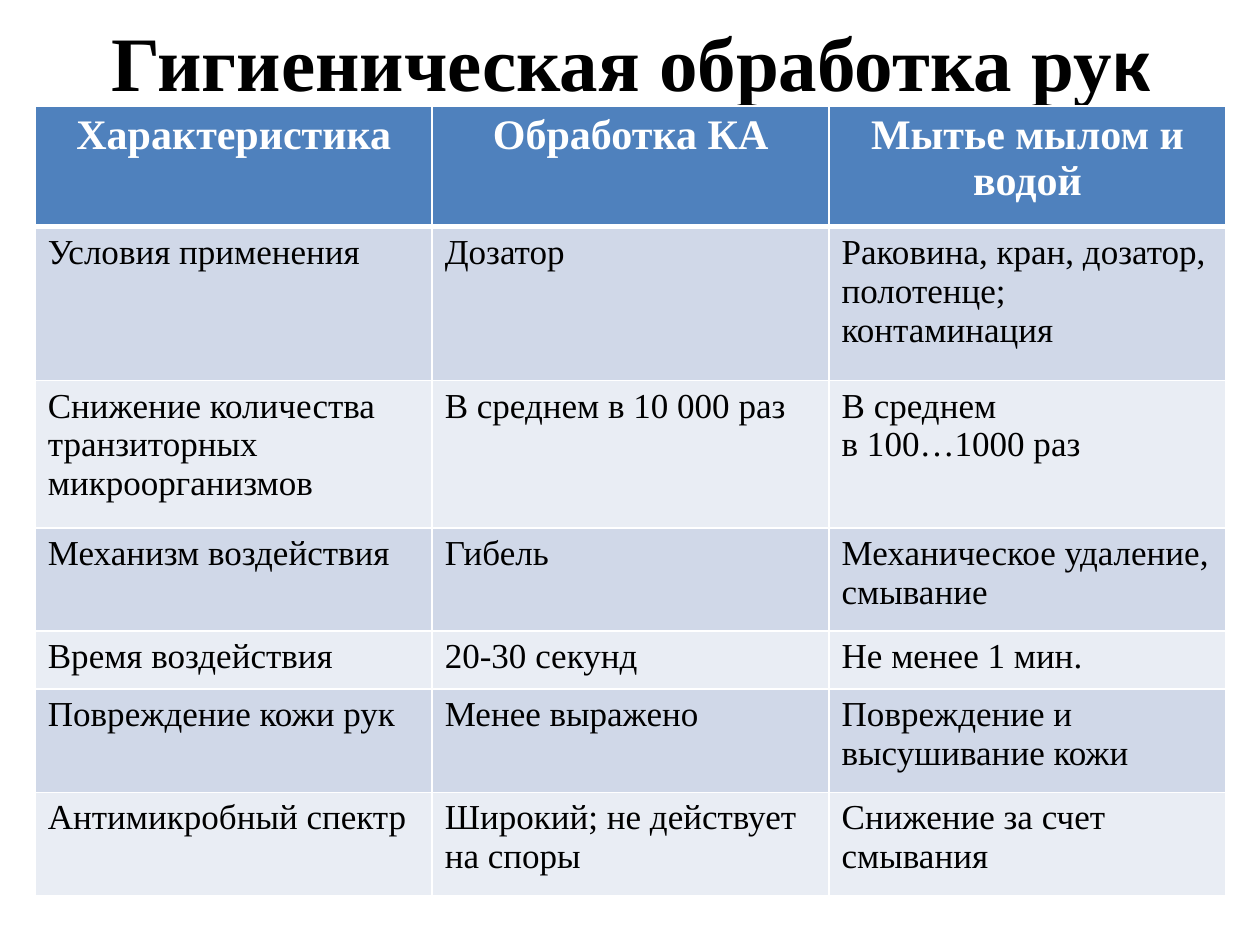
"""Build a slide comparing two methods of hand hygiene."""
from lxml.etree import SubElement
from pptx import Presentation
from pptx.dml.color import RGBColor as RGB
from pptx.enum.text import MSO_ANCHOR as Anchor, PP_ALIGN as Align
from pptx.oxml.ns import qn
from pptx.util import Inches, Pt

COLORS = {"header": "4F81BD", "odd": "D0D8E8", "even": "E9EDF4",
          "light": "FFFFFF", "dark": "000000"}
SERIF = "Times New Roman"
COLUMN_WIDTH = 3.15
ROW_HEIGHTS = [0.96, 1.22, 1.17, 0.82, 0.46, 0.82, 0.82]
COMPARISON = [
    ["Характеристика", "Обработка КА", "Мытье мылом и водой"],
    ["Условия применения", "Дозатор",
     "Раковина, кран, дозатор, полотенце; контаминация"],
    ["Снижение количества транзиторных микроорганизмов",
     "В среднем в 10 000 раз", "В среднем\nв 100…1000 раз"],
    ["Механизм воздействия", "Гибель", "Механическое удаление, смывание"],
    ["Время воздействия", "20-30 секунд", "Не менее 1 мин."],
    ["Повреждение кожи рук", "Менее выражено", "Повреждение и высушивание кожи"],
    ["Антимикробный спектр", "Широкий; не действует на споры",
     "Снижение за счет смывания"],
]


def style_font(font, size, color, bold):
    font.name = SERIF
    font.size = Pt(size)
    font.bold = bold
    font.color.rgb = RGB.from_string(COLORS[color])


def add_heading(slide):
    heading = slide.shapes.title
    heading.left, heading.top = Inches(0.51), Inches(0.02)
    heading.width, heading.height = Inches(9), Inches(0.93)
    frame = heading.text_frame
    frame.vertical_anchor = Anchor.MIDDLE
    line = frame.paragraphs[0]
    line.alignment = Align.CENTER
    for wording, typeface in (("Гигиеническая обработка ру", SERIF), ("к", "Calibri")):
        run = line.add_run()
        run.text = wording
        style_font(run.font, 44, "dark", True)
        run.font.name = typeface


def set_borders(cell, top, bottom):
    properties = cell._tc.get_or_add_tcPr()
    for side, width in (("L", 1), ("R", 1), ("T", top), ("B", bottom)):
        border = SubElement(properties, qn(f"a:ln{side}"), w=str(Pt(width)))
        fill = SubElement(border, qn("a:solidFill"))
        SubElement(fill, qn("a:srgbClr"), val=COLORS["light"])


def fill_cell(cell, wording, row):
    is_header = row == 0
    set_borders(cell, top=3 if row == 1 else 1, bottom=3 if is_header else 1)
    band = "header" if is_header else "odd" if row % 2 else "even"
    cell.fill.solid()
    cell.fill.fore_color.rgb = RGB.from_string(COLORS[band])
    cell.text = wording
    for paragraph in cell.text_frame.paragraphs:
        paragraph.alignment = Align.CENTER if is_header else Align.LEFT
        style_font(paragraph.font, 24 if is_header else 20,
                   "light" if is_header else "dark", is_header)


def add_comparison(slide):
    columns = len(COMPARISON[0])
    table = slide.shapes.add_table(
        len(COMPARISON), columns, Inches(0.28), Inches(0.84),
        Inches(COLUMN_WIDTH * columns), Inches(sum(ROW_HEIGHTS))).table
    for column in table.columns:
        column.width = Inches(COLUMN_WIDTH)
    for row, (height, wordings) in enumerate(zip(ROW_HEIGHTS, COMPARISON)):
        table.rows[row].height = Inches(height)
        for column, wording in enumerate(wordings):
            fill_cell(table.cell(row, column), wording, row)


def main():
    deck = Presentation()
    deck.slide_width, deck.slide_height = Inches(10), Inches(7.5)
    slide = deck.slides.add_slide(deck.slide_layouts.get_by_name("Title Only"))
    add_heading(slide)
    add_comparison(slide)
    deck.save("out.pptx")


if __name__ == "__main__":
    main()
